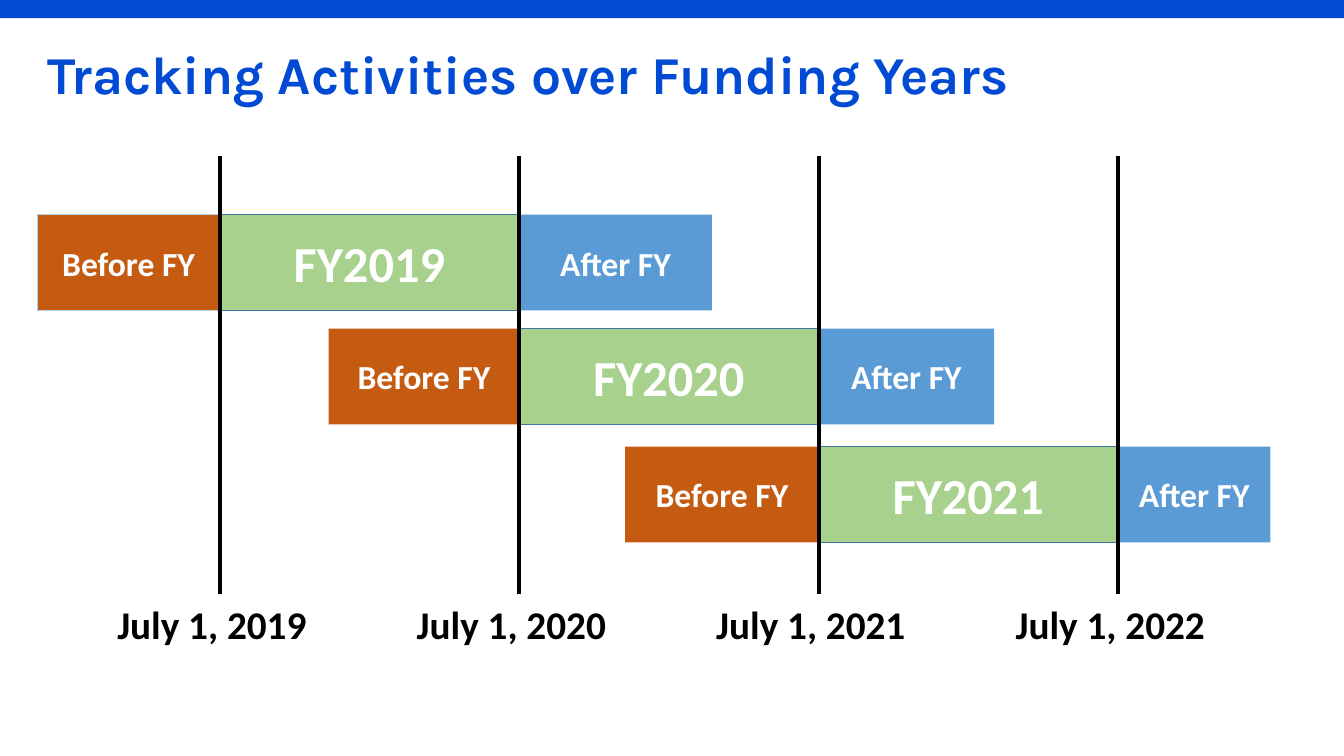
from dataclasses import dataclass

from lxml import etree
from pptx import Presentation
from pptx.dml.color import RGBColor
from pptx.enum.shapes import MSO_CONNECTOR, MSO_SHAPE
from pptx.enum.text import MSO_ANCHOR, MSO_AUTO_SIZE, PP_ALIGN
from pptx.oxml.ns import qn
from pptx.util import Inches, Pt

RECT = MSO_SHAPE.RECTANGLE
STRAIGHT = MSO_CONNECTOR.STRAIGHT
MIDDLE = MSO_ANCHOR.MIDDLE
NO_FIT, GROW = MSO_AUTO_SIZE.NONE, MSO_AUTO_SIZE.SHAPE_TO_FIT_TEXT
LEFT, CENTER = PP_ALIGN.LEFT, PP_ALIGN.CENTER


@dataclass(frozen=True)
class Theme:
    title_font: str = "Karla"
    body_font: str = "Calibri"
    brand: str = "004AD4"
    before: str = "C55A11"
    before_edge: str = "B5D2EC"
    year: str = "A9D18E"
    year_edge: str = "43739E"
    after: str = "5B9BD5"
    light: str = "FFFFFF"
    dark: str = "000000"
    title_size: int = 38
    year_size: int = 36
    date_size: int = 28
    side_size: int = 24


THEME = Theme()
SLIDE_W, SLIDE_H = 13.33, 7.5
FIRST_JULY, YEAR_W = 2.18, 2.97
BAR_H = 0.95
LINE_TOP, LINE_BOTTOM = 1.55, 5.89
DATE_TOP, DATE_W, DATE_H = 5.91, 2.23, 0.57
FIRST_YEAR = 2019
# Start of "before", end of "after", top and edge colour of "before", per year
ROWS = [
    (0.37, 7.06, 2.13, THEME.before_edge),
    (3.26, 9.86, 3.26, None),
    (6.20, 12.60, 4.43, None),
]


def july_x(i):
    """Horizontal place of the i-th July 1."""
    return FIRST_JULY + i * YEAR_W


def write(tf, text, size, color, font=THEME.body_font, align=LEFT):
    tf.text = text
    p = tf.paragraphs[0]
    p.alignment = align
    r = p.runs[0]
    r.font.name = font
    r.font.size = Pt(size)
    r.font.bold = True
    r.font.color.rgb = RGBColor.from_string(color)


def add_rect(s, x, y, w, h, fill, edge=None):
    sp = s.shapes.add_shape(RECT, Inches(x), Inches(y), Inches(w), Inches(h))
    sp.shadow.inherit = False
    sp.fill.solid()
    sp.fill.fore_color.rgb = RGBColor.from_string(fill)
    if edge:
        sp.line.color.rgb = RGBColor.from_string(edge)
        sp.line.width = Pt(1)
    else:
        sp.line.fill.background()
    return sp


def add_bar(s, x1, x2, y, text, size, fill, edge=None):
    tf = add_rect(s, x1, y, x2 - x1, BAR_H, fill, edge).text_frame
    tf.word_wrap = True
    tf.vertical_anchor = MIDDLE
    write(tf, text, size, THEME.light, align=CENTER)


def add_year_row(s, i, start, end, y, before_edge):
    x1, x2 = july_x(i), july_x(i + 1)
    add_bar(s, start, x1, y, "Before FY", THEME.side_size, THEME.before, before_edge)
    add_bar(s, x1, x2, y, f"FY{FIRST_YEAR + i}", THEME.year_size, THEME.year, THEME.year_edge)
    add_bar(s, x2, end, y, "After FY", THEME.side_size, THEME.after)


def add_july_line(s, x):
    line = s.shapes.add_connector(
        STRAIGHT, Inches(x), Inches(LINE_TOP), Inches(x), Inches(LINE_BOTTOM))
    line.line.color.rgb = RGBColor.from_string(THEME.dark)
    line.line.width = Pt(3)
    etree.SubElement(line._element.spPr, qn("a:effectLst"))


def add_date(s, x, text):
    tb = s.shapes.add_textbox(
        Inches(x - DATE_W / 2), Inches(DATE_TOP), Inches(DATE_W), Inches(DATE_H))
    tf = tb.text_frame
    tf.word_wrap = True
    tf.auto_size = GROW
    write(tf, text, THEME.date_size, THEME.dark)


def set_title(s, text):
    title = s.shapes.title
    title.left, title.top = Inches(0.37), Inches(0.39)
    title.width, title.height = Inches(12.58), Inches(0.75)
    tf = title.text_frame
    tf.auto_size = NO_FIT
    tf.vertical_anchor = MIDDLE
    write(tf, text, THEME.title_size, THEME.brand, THEME.title_font)
    tf.paragraphs[0].line_spacing = 0.9


def main():
    prs = Presentation()
    prs.slide_width, prs.slide_height = Inches(SLIDE_W), Inches(SLIDE_H)
    s = prs.slides.add_slide(prs.slide_layouts[5])
    add_rect(s, 0, 0, SLIDE_W, 0.18, THEME.brand)
    set_title(s, "Tracking Activities over Funding Years")
    for i, row in enumerate(ROWS):
        add_year_row(s, i, *row)
    for i in range(len(ROWS) + 1):
        add_july_line(s, july_x(i))
        add_date(s, july_x(i), f"July 1, {FIRST_YEAR + i}")
    prs.save("out.pptx")


if __name__ == "__main__":
    main()
